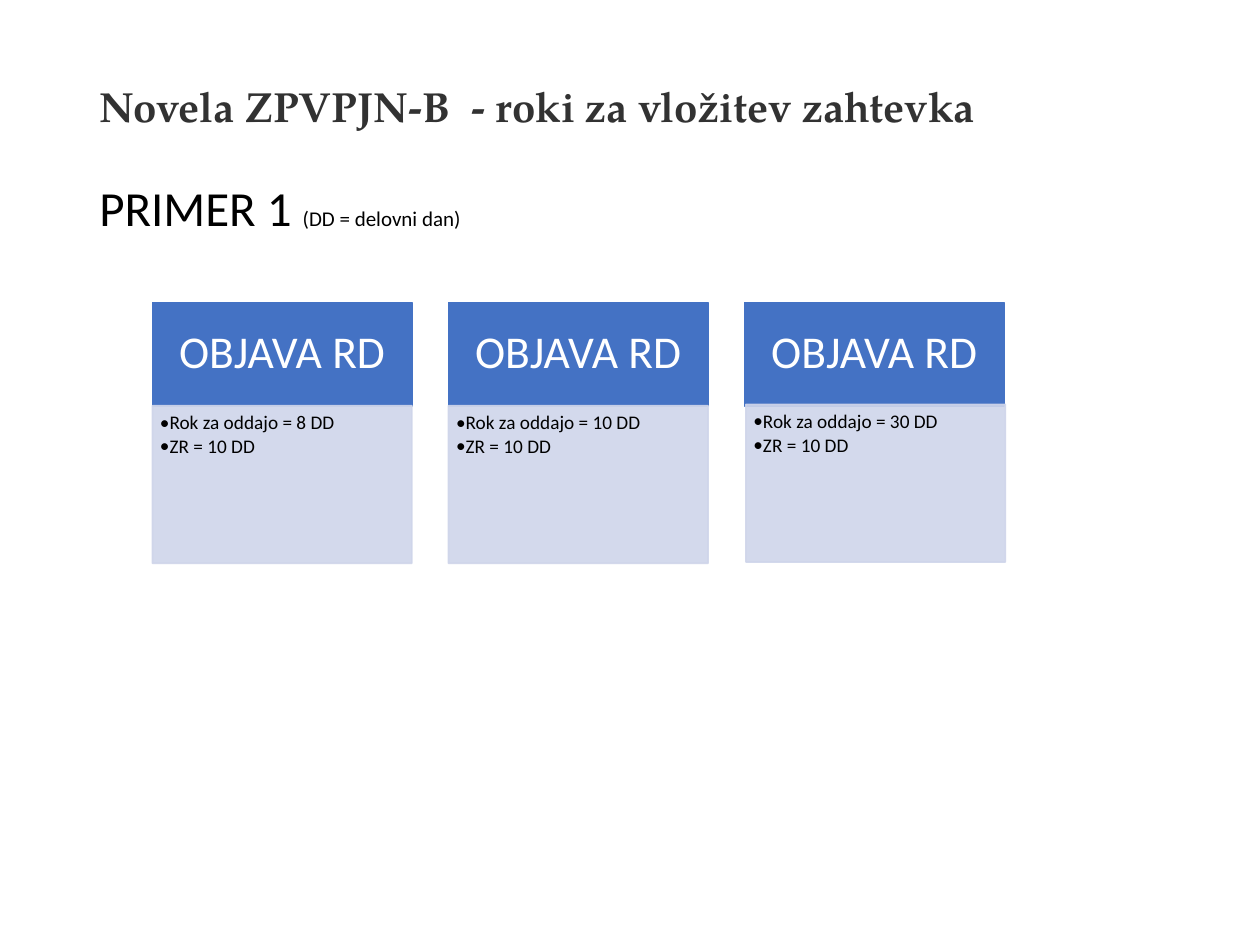
"""Build a slide comparing three deadline cases for filing a claim."""
from collections import namedtuple

from lxml.etree import SubElement
from pptx import Presentation
from pptx.dml.color import RGBColor as RGB
from pptx.enum.shapes import MSO_SHAPE as SHAPE
from pptx.enum.text import MSO_ANCHOR as ANCHOR, PP_ALIGN as ALIGN
from pptx.oxml.ns import qn
from pptx.util import Inches, Pt

Theme = namedtuple("Theme", "ink black white blue pale serif sans title heading note header bullet")
theme = Theme(
    ink=RGB(0x32, 0x32, 0x32), black=RGB(0, 0, 0), white=RGB(255, 255, 255),
    blue=RGB(0x44, 0x72, 0xC4), pale=RGB(0xCF, 0xD5, 0xEA),
    serif="TeX Gyre Pagella", sans="Calibri",
    title=24, heading=28, note=12, header=26, bullet=11,
)


def write(p, text, size, color=theme.black, font=theme.sans, bold=False, align=ALIGN.LEFT, after=0):
    p.alignment, p.line_spacing = align, 0.9
    p.space_before, p.space_after = Pt(0), Pt(after)
    r = p.add_run()
    r.text = text
    r.font.name, r.font.size, r.font.bold = font, Pt(size), bold
    r.font.color.rgb = color


def add_box(left, top, height, color, anchor, insets, alpha=100):
    sp = s.shapes.add_shape(SHAPE.RECTANGLE, Inches(left), Inches(top), Inches(card_width), Inches(height))
    sp.shadow.inherit = False
    sp.fill.solid()
    sp.fill.fore_color.rgb = color
    sp.line.color.rgb = color
    sp.line.width = Pt(1)
    if alpha < 100:
        for clr in sp._element.spPr.iter(qn("a:srgbClr")):
            SubElement(clr, qn("a:alpha"), val=str(alpha * 1000))
    tf = sp.text_frame
    tf.word_wrap, tf.vertical_anchor = True, anchor
    tf.margin_left, tf.margin_top, tf.margin_right, tf.margin_bottom = map(Inches, insets)
    return tf


prs = Presentation()
prs.slide_width, prs.slide_height = Inches(10), Inches(7.5)
s = prs.slides.add_slide(prs.slide_layouts[6])

title = s.shapes.add_textbox(Inches(0.69), Inches(0.4), Inches(8.62), Inches(0.92))
tf = title.text_frame
tf.word_wrap, tf.vertical_anchor = True, ANCHOR.MIDDLE
write(tf.paragraphs[0], "Novela ZPVPJN-B  - roki za vložitev zahtevka", theme.title,
      color=theme.ink, font=theme.serif, bold=True)

heading = s.shapes.add_textbox(Inches(0.69), Inches(1.41), Inches(8.62), Inches(5.24))
tf = heading.text_frame
tf.word_wrap = True
write(tf.paragraphs[0], "PRIMER 1 ", theme.heading)
write(tf.paragraphs[0], "(DD = delovni dan)", theme.note)

card_left, card_top, card_width, card_pitch = 1.21, 2.4, 2.06, 2.35
header_height, body_height = 0.82, 1.25

for i, (days, nudge) in enumerate(((8, 0), (10, 0), (30, 0.01))):
    left = card_left + i * card_pitch
    tf = add_box(left, card_top, header_height, theme.blue, ANCHOR.MIDDLE, (0.2, 0.12, 0.2, 0.12))
    write(tf.paragraphs[0], "OBJAVA RD", theme.header, color=theme.white,
          align=ALIGN.CENTER, after=0.35 * theme.header)

    tf = add_box(left + nudge, card_top + header_height - nudge, body_height, theme.pale, ANCHOR.TOP,
                 (0.06, 0.06, 0.09, 0.1), alpha=90)
    for n, text in enumerate((f"Rok za oddajo = {days} DD", "ZR = 10 DD")):
        p = tf.add_paragraph() if n else tf.paragraphs[0]
        pPr = p._p.get_or_add_pPr()
        pPr.set("marL", str(Inches(0.06)))
        pPr.set("indent", str(-Inches(0.06)))
        SubElement(pPr, qn("a:buFont"), typeface=theme.sans)
        SubElement(pPr, qn("a:buChar"), char="•")
        write(p, text, theme.bullet, after=0.15 * theme.bullet)

prs.save("out.pptx")
